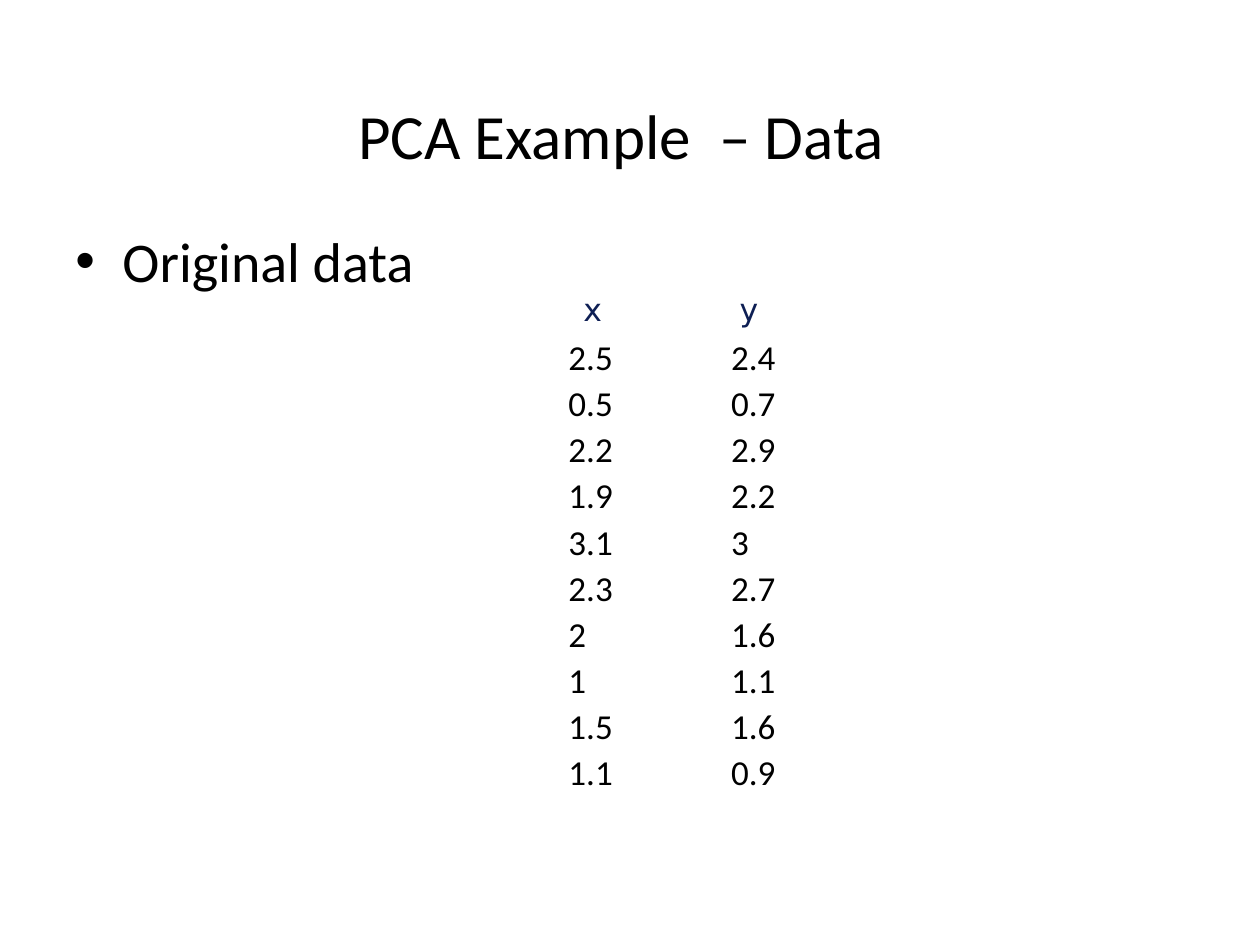
from pptx import Presentation
from pptx.dml.color import RGBColor
from pptx.enum.text import MSO_ANCHOR, PP_ALIGN
from pptx.oxml.ns import qn
from pptx.util import Cm, Pt
from lxml import etree

MIDDLE, BOTTOM = MSO_ANCHOR.MIDDLE, MSO_ANCHOR.BOTTOM
CENTER = PP_ALIGN.CENTER
BLACK = RGBColor(0x00, 0x00, 0x00)
NAVY = RGBColor(0x0E, 0x1F, 0x54)
DATA = [
    ("2.5", "2.4"), ("0.5", "0.7"), ("2.2", "2.9"), ("1.9", "2.2"), ("3.1", "3"),
    ("2.3", "2.7"), ("2", "1.6"), ("1", "1.1"), ("1.5", "1.6"), ("1.1", "0.9"),
]


class SlideBuilder:
    """Hold the text style and the current slide, and add elements to it."""

    font_name = "Calibri"

    def __init__(self, presentation):
        self.slide = presentation.slides.add_slide(presentation.slide_layouts[5])

    def style(self, paragraph, size, color=BLACK, name=None):
        font = paragraph.font
        font.name, font.size = name or self.font_name, Pt(size)
        font.color.rgb = color

    def title(self, text, left, top, width, height):
        shape = self.slide.shapes.title
        shape.left, shape.top = Cm(left), Cm(top)
        shape.width, shape.height = Cm(width), Cm(height)
        shape.text_frame.text = text
        shape.text_frame.vertical_anchor = MIDDLE
        paragraph = shape.text_frame.paragraphs[0]
        paragraph.alignment = CENTER
        self.style(paragraph, 36)

    def text(self, text, left, top, width, height, size, wrap=True, **style):
        shape = self.slide.shapes.add_textbox(Cm(left), Cm(top), Cm(width), Cm(height))
        shape.text_frame.word_wrap = wrap
        paragraph = shape.text_frame.paragraphs[0]
        paragraph.text = text
        paragraph.space_before = Pt(size * 0.2)
        self.style(paragraph, size, **style)
        return paragraph

    def bullet(self, text, left, top, width, height, size, indent):
        paragraph = self.text(text, left, top, width, height, size)
        properties = paragraph._p.get_or_add_pPr()
        properties.set("marL", str(Cm(indent)))
        properties.set("indent", str(-Cm(indent)))
        etree.SubElement(properties, qn("a:buFont"), typeface="Arial")
        etree.SubElement(properties, qn("a:buChar"), char="•")

    def tabbed_header(self, labels, left, top, width, height, size, tab, **style):
        paragraph = self.text("\t".join(labels), left, top, width, height, size, False, **style)
        tabs = etree.SubElement(paragraph._p.get_or_add_pPr(), qn("a:tabLst"))
        etree.SubElement(tabs, qn("a:tab"), pos=str(Cm(tab)), algn="l")

    def table(self, rows, left, top, column_widths, row_height, size, inset):
        table = self.slide.shapes.add_table(
            len(rows), len(column_widths), Cm(left), Cm(top),
            Cm(sum(column_widths)), Cm(row_height * len(rows))).table
        table.first_row = table.horz_banding = False
        for column, width in zip(table.columns, column_widths):
            column.width = Cm(width)
        for row, values in zip(table.rows, rows):
            row.height = Cm(row_height)
            for cell, value in zip(row.cells, values):
                cell.text = value
                cell.fill.background()
                cell.vertical_anchor = BOTTOM
                cell.margin_left = Cm(inset)
                cell.margin_top = cell.margin_right = cell.margin_bottom = 0
                self.style(cell.text_frame.paragraphs[0], size)


def main():
    presentation = Presentation()
    presentation.slide_width, presentation.slide_height = Cm(25.4), Cm(19.05)
    builder = SlideBuilder(presentation)
    builder.title("PCA Example  – Data", 1.09, 1.12, 22.86, 3.18)
    builder.table(DATA, 10.49, 6.73, (3.28, 2.82), 0.93, 20, 0.97)
    builder.bullet("Original data", 1.27, 4.45, 22.86, 12.57, 32, 0.95)
    builder.tabbed_header(("x", "y"), 11.51, 5.72, 4.14, 1.02, 18, 3.15,
                          color=NAVY, name="DejaVu Sans")
    presentation.save("out.pptx")


if __name__ == "__main__":
    main()
